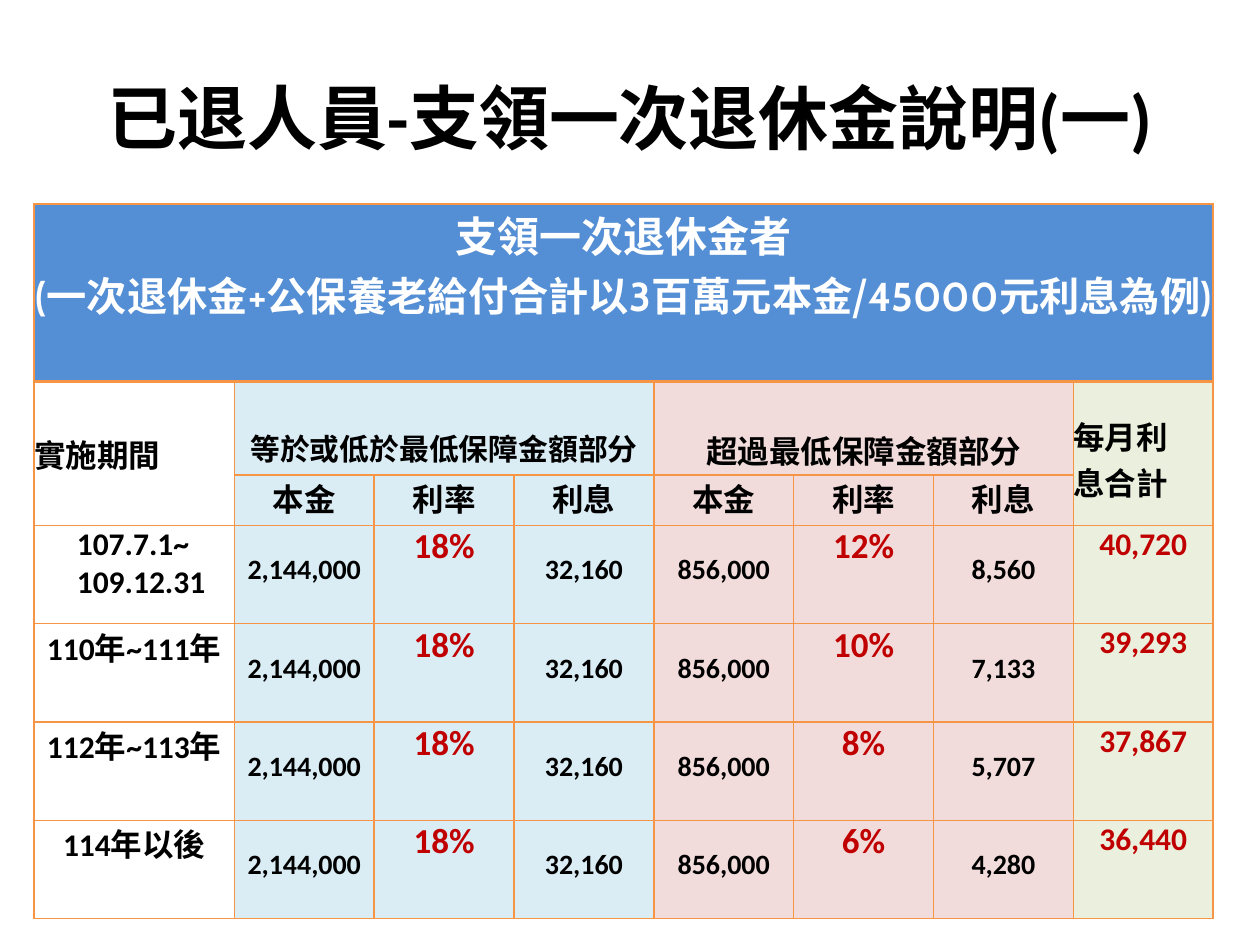
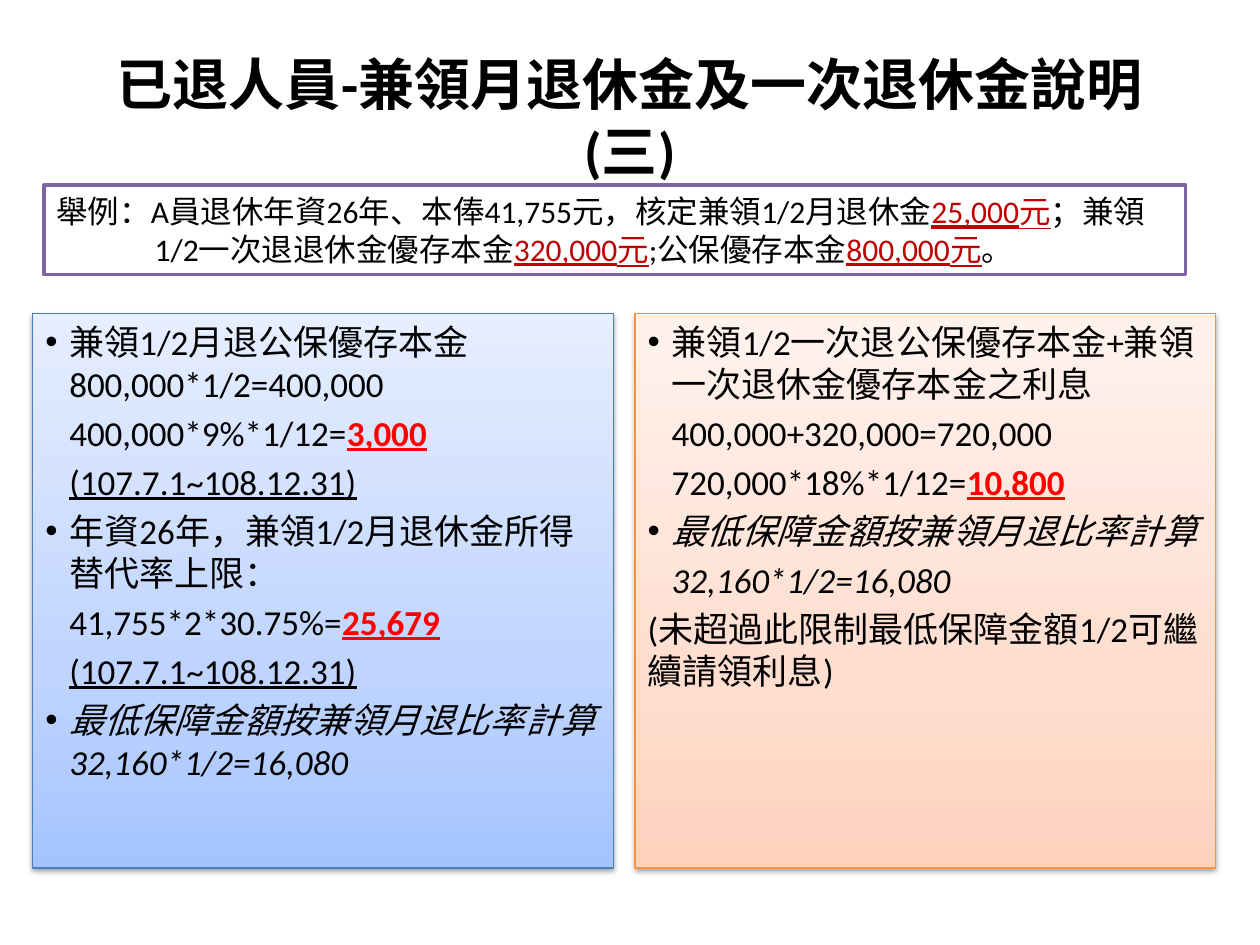
from lxml.etree import SubElement
from pptx import Presentation
from pptx.dml.color import RGBColor
from pptx.enum.shapes import MSO_SHAPE as Shape
from pptx.enum.text import MSO_ANCHOR as Anchor, MSO_AUTO_SIZE as AutoSize, PP_ALIGN as Align
from pptx.oxml.ns import qn
from pptx.util import Inches, Pt

COLORS = {
    "text": "000000", "white": "FFFFFF", "dark_red": "C00000", "red": "FF0000",
    "header": "548ED4", "blue": "DBEDF4", "pink": "F1DCDB", "green": "EBF0DE",
    "border": "F79546", "purple": "8064A2", "blue_line": "4B7EBC", "orange_line": "F69240",
}
GRADIENTS = {
    "blue_line": ((0, "A4C4FF"), (35, "BFD4FF"), (100, "E6EEFF")),
    "orange_line": ((0, "FFD2BD"), (35, "FFDED0"), (100, "FFF2ED")),
}
LATIN, CJK, HEADING = "Calibri", "Noto Sans CJK SC", "Cabin"
ANSWER = {"color": "red", "bold": True, "underline": True}
AMOUNT = {"color": "dark_red", "underline": True}
UNDERLINED = {"underline": True}
ITALIC = {"italic": True}

COLUMN_WIDTHS = [1.59] + [1.11] * 7
ROW_HEIGHTS = [0.88, 0.74, 0.4] + [0.78] * 4
COLUMN_FILLS = [None] + ["blue"] * 3 + ["pink"] * 3 + ["green"]
PERIODS = [
    [["107.7.1~"], ["109.12.31"]],
    [["110", ("年", {"name": CJK}), "~111", ("年", {"name": CJK})]],
    [["112", ("年", {"name": CJK}), "~113", ("年", {"name": CJK})]],
    [["114", ("年以後", {"name": CJK})]],
]
EXCESS_VALUES = [
    ("12%", "8,560", "40,720"),
    ("10%", "7,133", "39,293"),
    ("8%", "5,707", "37,867"),
    ("6%", "4,280", "36,440"),
]

EXAMPLE = [
    "舉例：A員退休年資26年、本俸41,755元，核定兼領1/2月退休金", ("25,000元", AMOUNT),
    "；兼領1/2一次退退休金優存本金", ("320,000元", AMOUNT),
    ";公保優存本金", ("800,000元", AMOUNT), "。",
]
MONTHLY_LIST = [
    ("bullet", ["兼領1/2月退公保優存本金800,000*1/2=400,000"]),
    ("indent", ["400,000*9%*1/12=", ("3,000", ANSWER)]),
    ("indent", [("(107.7.1~108.12.31)", UNDERLINED)]),
    ("bullet", ["年資26年，兼領1/2月退休金所得替代率上限："]),
    ("indent", ["41,755*2*30.75%=", ("25,679", ANSWER)]),
    ("indent", [("(107.7.1~108.12.31)", UNDERLINED)]),
    ("bullet", [("最低保障金額按兼領月退比率計算32,160*1/2=16,080", ITALIC)]),
]
LUMP_SUM_LIST = [
    ("bullet", ["兼領1/2一次退公保優存本金+兼領一次退休金優存本金之利息"]),
    ("indent", ["400,000+320,000=720,000"]),
    ("indent", ["720,000*18%*1/12=", ("10,800", ANSWER)]),
    ("bullet", [("最低保障金額按兼領月退比率計算", ITALIC)]),
    ("indent", [("32,160*1/2=16,080", ITALIC)]),
    ("plain", ["(未超過此限制最低保障金額1/2可繼續請領利息)"]),
]


def rgb(color):
    return RGBColor.from_string(COLORS[color])


def style_font(font, size=None, name=None, color=None, bold=None, italic=None, underline=None):
    if size:
        font.size = Pt(size)
    if name:
        font.name = name
    if color:
        font.color.rgb = rgb(color)
    for attribute, value in (("bold", bold), ("italic", italic), ("underline", underline)):
        if value is not None:
            setattr(font, attribute, value)


def write_runs(paragraph, parts, **style):
    base = {"name": LATIN, "color": "text", **style}
    style_font(paragraph.font, **base)
    for part in parts:
        text, changes = (part, {}) if isinstance(part, str) else part
        run = paragraph.add_run()
        run.text = text
        style_font(run.font, **{**base, **changes})


def next_paragraph(text_frame, index):
    return text_frame.paragraphs[0] if index == 0 else text_frame.add_paragraph()


def place(shape, left, top, width, height):
    shape.left, shape.top = Inches(left), Inches(top)
    shape.width, shape.height = Inches(width), Inches(height)


def set_indent(paragraph, left, first):
    properties = paragraph._p.get_or_add_pPr()
    properties.set("marL", str(Inches(left)))
    properties.set("indent", str(Inches(first)))
    return properties


def add_titled_slide(presentation, layout, text, size):
    slide = presentation.slides.add_slide(presentation.slide_layouts[layout])
    title = slide.shapes.title
    place(title, 0.5, 0.3, 9, 1.25)
    title.text_frame.vertical_anchor = Anchor.MIDDLE
    paragraph = title.text_frame.paragraphs[0]
    paragraph.alignment = Align.CENTER
    write_runs(paragraph, [text], size=size, bold=True)
    return slide


def set_borders(cell, row):
    properties = cell._tc.get_or_add_tcPr()
    widths = {"L": 1, "R": 1, "T": 2 if row == 1 else 1, "B": 2 if row == 0 else 1}
    for side, width in widths.items():
        line = SubElement(properties, qn(f"a:ln{side}"), w=str(Pt(width)))
        fill = SubElement(line, qn("a:solidFill"))
        SubElement(fill, qn("a:srgbClr"), val=COLORS["border"])


def format_cell(cell, row, fill):
    set_borders(cell, row)
    if fill:
        cell.fill.solid()
        cell.fill.fore_color.rgb = rgb(fill)
    else:
        cell.fill.background()
    cell.margin_left = cell.margin_right = cell.margin_top = cell.margin_bottom = 0


def write_cell(cell, lines, size=18, align=Align.CENTER, top=0, **style):
    cell.margin_top = Inches(top)
    for index, parts in enumerate(lines):
        paragraph = next_paragraph(cell.text_frame, index)
        paragraph.alignment = align
        write_runs(paragraph, parts, **{"size": size, "bold": True, **style})


def write_table_heading(table):
    for row, column, last_row, last_column in (
        (0, 0, 0, 7), (1, 0, 2, 0), (1, 1, 1, 3), (1, 4, 1, 6), (1, 7, 2, 7),
    ):
        table.cell(row, column).merge(table.cell(last_row, last_column))

    heading = table.cell(0, 0)
    write_cell(heading, [
        [("支領一次退休金者", {"size": 24})],
        ["(一次退休金+公保養老給付合計以3百萬元本金", ("/", {"name": CJK}), "45000",
         ("元", {"name": CJK}), "利息為例)"],
    ], size=23, name=HEADING, color="white")

    period, total = table.cell(1, 0), table.cell(1, 7)
    for cell, text, top in ((period, "實施期間", 0), (total, "每月利息合計", 0.08)):
        write_cell(cell, [[text]], align=Align.LEFT, top=top, name=CJK)
        cell.vertical_anchor = Anchor.MIDDLE
    total.margin_right = Inches(0.25)

    write_cell(table.cell(1, 1), [["等於或低於最低保障金額部分"]], size=17, top=0.35, name=CJK)
    write_cell(table.cell(1, 4), [["超過最低保障金額部分"]], top=0.36, name=CJK)
    for column, text in enumerate(("本金", "利率", "利息") * 2, start=1):
        write_cell(table.cell(2, column), [[text]], name=CJK)


def write_table_values(table):
    for row, (period, excess) in enumerate(zip(PERIODS, EXCESS_VALUES), start=3):
        period_cell = table.cell(row, 0)
        two_lines = len(period) > 1
        write_cell(period_cell, period, align=Align.LEFT if two_lines else Align.CENTER)
        if two_lines:
            period_cell.margin_left = Inches(0.34)
        rate, interest, total = excess
        values = ("2,144,000", "18%", "32,160", "856,000", rate, interest)
        for column, value in enumerate(values, start=1):
            if value.endswith("%"):
                write_cell(table.cell(row, column), [[value]], size=20, color="dark_red")
            else:
                write_cell(table.cell(row, column), [[value]], size=16, top=0.22)
        write_cell(table.cell(row, 7), [[total]], color="dark_red")


def add_interest_table(slide):
    frame = slide.shapes.add_table(
        len(ROW_HEIGHTS), len(COLUMN_WIDTHS),
        Inches(0.27), Inches(1.62), Inches(9.38), Inches(5.13))
    table = frame.table
    table.first_row = table.horz_banding = False
    for column, width in zip(table.columns, COLUMN_WIDTHS):
        column.width = Inches(width)
    for row, height in zip(table.rows, ROW_HEIGHTS):
        row.height = Inches(height)
    for row in range(len(ROW_HEIGHTS)):
        for column, fill in enumerate(COLUMN_FILLS):
            format_cell(table.cell(row, column), row, "header" if row == 0 else fill)
    write_table_heading(table)
    write_table_values(table)


def add_example_box(slide):
    box = slide.shapes.add_shape(
        Shape.RECTANGLE, Inches(0.35), Inches(1.47), Inches(9.06), Inches(0.71))
    box.shadow.inherit = False
    box.fill.solid()
    box.fill.fore_color.rgb = rgb("white")
    box.line.color.rgb = rgb("purple")
    box.line.width = Pt(2)
    box.text_frame.word_wrap = True
    box.text_frame.auto_size = AutoSize.SHAPE_TO_FIT_TEXT
    paragraph = box.text_frame.paragraphs[0]
    paragraph.alignment = Align.LEFT
    set_indent(paragraph, 0.78, -0.78)
    write_runs(paragraph, EXAMPLE, size=18)


def fill_gradient(shape, stops):
    shape.fill.gradient()
    shape.fill.gradient_angle = 90
    stop_list = shape._element.spPr.find(qn("a:gradFill")).find(qn("a:gsLst"))
    for stop in list(stop_list):
        stop_list.remove(stop)
    for position, color in stops:
        stop = SubElement(stop_list, qn("a:gs"), pos=str(position * 1000))
        SubElement(stop, qn("a:srgbClr"), val=color)


def add_soft_shadow(shape):
    shape.shadow.inherit = False
    effects = shape._element.spPr.find(qn("a:effectLst"))
    shadow = SubElement(effects, qn("a:outerShdw"), blurRad=str(Pt(3.1)), dist=str(Pt(1.6)),
                        dir="5400000", rotWithShape="0")
    color = SubElement(shadow, qn("a:srgbClr"), val=COLORS["text"])
    SubElement(color, qn("a:alpha"), val="38000")


def fill_list_panel(panel, left, line_color, items):
    place(panel, left, 2.49, 4.61, 4.4)
    fill_gradient(panel, GRADIENTS[line_color])
    panel.line.color.rgb = rgb(line_color)
    panel.line.width = Pt(0.75)
    add_soft_shadow(panel)
    text_frame = panel.text_frame
    text_frame.word_wrap = True
    text_frame.auto_size = AutoSize.NONE
    indents = {"bullet": (0.19, -0.19), "indent": (0, 0.19), "plain": (0, 0)}
    for index, (kind, parts) in enumerate(items):
        paragraph = next_paragraph(text_frame, index)
        properties = set_indent(paragraph, *indents[kind])
        if kind == "bullet":
            SubElement(properties, qn("a:buChar"), char="•")
        else:
            SubElement(properties, qn("a:buNone"))
        write_runs(paragraph, parts, size=20)


def main():
    presentation = Presentation()
    presentation.slide_width, presentation.slide_height = Inches(10), Inches(7.5)

    lump_sum_slide = add_titled_slide(presentation, 5, "已退人員-支領一次退休金說明(一)", 40)
    add_interest_table(lump_sum_slide)

    combined_slide = add_titled_slide(
        presentation, 3, "已退人員-兼領月退休金及一次退休金說明(三)", 32)
    add_example_box(combined_slide)
    fill_list_panel(combined_slide.placeholders[1], 0.26, "blue_line", MONTHLY_LIST)
    fill_list_panel(combined_slide.placeholders[2], 5.04, "orange_line", LUMP_SUM_LIST)

    presentation.save("out.pptx")


if __name__ == "__main__":
    main()
